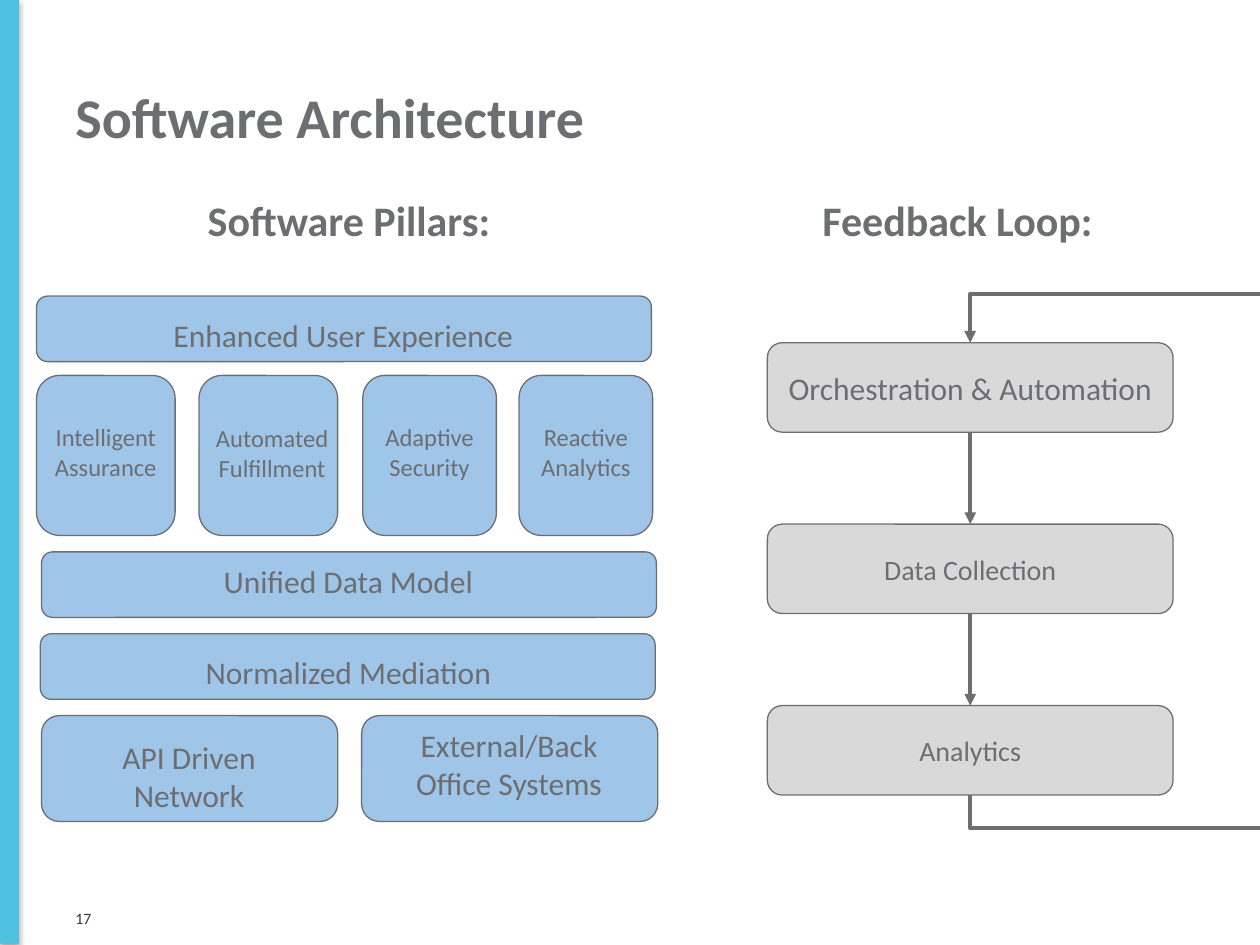
from itertools import pairwise

from lxml.etree import SubElement
from pptx import Presentation
from pptx.dml.color import RGBColor
from pptx.enum.shapes import MSO_CONNECTOR as Link, MSO_SHAPE as Preset
from pptx.enum.text import MSO_ANCHOR as Anchor, PP_ALIGN as Align
from pptx.oxml.ns import qn
from pptx.util import Emu, Inches, Pt

GRAY = RGBColor(0x6D, 0x6E, 0x71)
DARK = RGBColor(0x36, 0x37, 0x39)
CYAN = RGBColor(0x4E, 0xC1, 0xE0)
BLUE = RGBColor(0x9F, 0xC5, 0xE8)
SILVER = RGBColor(0xD9, 0xD9, 0xD9)
FONT = "Calibri"

TITLE = "Software Architecture"
PAGE_NUMBER = "17"
HEADINGS = [("Software Pillars:", 0.72), ("Feedback Loop:", 5.55)]
LAYERS = [
    (["Enhanced User Experience"], (0.29, 2.35), (0.52, 2.41, 4.41, 0.39)),
    (["Unified Data Model"], (0.33, 4.38), (0.56, 4.36, 4.41, 0.33)),
    (["Normalized Mediation"], (0.32, 5.03), (0.56, 5.08, 4.41, 0.39)),
]
PILLARS = [
    (["Intelligent Assurance"], (0.29, 1.1), (0.29, 3.25, 1.1, 0.61)),
    (["Automated", "Fulfillment"], (1.58, 1.1), (1.5, 3.26, 1.32, 0.61)),
    (["Adaptive Security"], (2.88, 1.06), (2.88, 3.25, 1.06, 0.61)),
    (["Reactive Analytics"], (4.12, 1.06), (4.12, 3.25, 1.06, 0.61)),
]
SOURCES = [
    (["API Driven Network"], 0.33, (0.49, 5.76, 2.02, 0.44)),
    (["External/Back Office Systems"], 2.87, (3.03, 5.66, 2.02, 0.85)),
]
LOOP_STEPS = [("Orchestration & Automation", 18), ("Data Collection", 16), ("Analytics", 16)]
LOOP_LEFT, LOOP_TOP, LOOP_PITCH = 6.09, 2.72, 1.44
STEP_WIDTH, STEP_HEIGHT = 3.22, 0.71

deck = Presentation()
deck.slide_width, deck.slide_height = Inches(10), Inches(7.5)
slide = deck.slides.add_slide(deck.slide_layouts[6])
shapes = slide.shapes


def write(shape, lines, size, color=GRAY, bold=False, align=Align.CENTER,
          anchor=Anchor.TOP, margin=0.1):
    frame = shape.text_frame
    frame.word_wrap = True
    frame.vertical_anchor = anchor
    frame.margin_left = frame.margin_right = Inches(0.1)
    frame.margin_top = frame.margin_bottom = Inches(margin)
    for index, line in enumerate(lines):
        paragraph = frame.add_paragraph() if index else frame.paragraphs[0]
        paragraph.alignment = align
        run = paragraph.add_run()
        run.text = line
        run.font.name, run.font.size, run.font.bold = FONT, Pt(size), bold
        run.font.color.rgb = color


def label(place, lines, size, **style):
    write(shapes.add_textbox(*map(Inches, place)), lines, size, **style)


def rounded_box(place, fill):
    box = shapes.add_shape(Preset.ROUNDED_RECTANGLE, *map(Inches, place))
    box.shadow.inherit = False
    box.fill.solid()
    box.fill.fore_color.rgb = fill
    box.line.color.rgb = GRAY
    box.line.width = Pt(0.75)
    return box


def arrow(kind, source, target):
    link = shapes.add_connector(kind, 0, 0, 0, 0)
    link.begin_connect(source, 2)
    link.end_connect(target, 0)
    link.line.color.rgb = GRAY
    link.line.width = Pt(2.25)
    SubElement(link.line._get_or_add_ln(), qn("a:tailEnd"), type="triangle")
    SubElement(link._element.spPr, qn("a:effectLst"))
    return link


def side_bar():
    bar = shapes.add_shape(Preset.RECTANGLE, 0, 0, Inches(0.15), Inches(7.49))
    bar.shadow.inherit = False
    bar.fill.solid()
    bar.fill.fore_color.rgb = CYAN
    bar.line.fill.background()
    shadow = SubElement(bar._element.spPr.find(qn("a:effectLst")), qn("a:outerShdw"),
                        blurRad=str(Pt(3.1)), dist=str(Pt(1.8)), dir="5400000",
                        rotWithShape="0")
    black = SubElement(shadow, qn("a:srgbClr"), val="000000")
    SubElement(black, qn("a:alpha"), val="35000")


def return_arrow(last, first):
    link = arrow(Link.ELBOW, last, first)
    rise = last.top + last.height - first.top
    middle = first.left + first.width // 2
    link.left, link.top = Emu(middle - rise // 2), Emu(first.top + rise // 2)
    link.width, link.height = Emu(rise), Emu(600)
    properties = link._element.spPr
    frame = properties.find(qn("a:xfrm"))
    for flip in ("flipH", "flipV"):
        frame.attrib.pop(flip, None)
    frame.set("rot", "16200000")
    geometry = properties.find(qn("a:prstGeom"))
    geometry.set("prst", "bentConnector5")
    guides = geometry.find(qn("a:avLst"))
    for number, value in enumerate((-7300, 297324800, 110800), 1):
        SubElement(guides, qn("a:gd"), name=f"adj{number}", fmla=f"val {value}")


side_bar()
label((0.5, 0.3, 9, 1.25), [TITLE], 32, bold=True, align=Align.LEFT,
      anchor=Anchor.MIDDLE, margin=0.05)
label((0.5, 7.09, 0.49, 0.4), [PAGE_NUMBER], 9, color=DARK, align=Align.LEFT,
      anchor=Anchor.MIDDLE, margin=0.05)
for heading, left in HEADINGS:
    label((left, 1.44, 4.1, 0.61), [heading], 24, bold=True,
          anchor=Anchor.MIDDLE, margin=0.05)

steps = []
for row, (name, size) in enumerate(LOOP_STEPS):
    step = rounded_box((LOOP_LEFT, LOOP_TOP + row * LOOP_PITCH, STEP_WIDTH, STEP_HEIGHT), SILVER)
    write(step, [name], size, anchor=Anchor.MIDDLE)
    steps.append(step)
for upper, lower in pairwise(steps):
    arrow(Link.STRAIGHT, upper, lower)
return_arrow(steps[-1], steps[0])

for lines, (left, top), text_place in LAYERS:
    rounded_box((left, top, 4.88, 0.52), BLUE)
    label(text_place, lines, 18)
for lines, (left, width), text_place in PILLARS:
    rounded_box((left, 2.98, width, 1.27), BLUE)
    label(text_place, lines, 14)
for lines, left, text_place in SOURCES:
    rounded_box((left, 5.68, 2.35, 0.84), BLUE)
    label(text_place, lines, 18)

deck.save("out.pptx")
